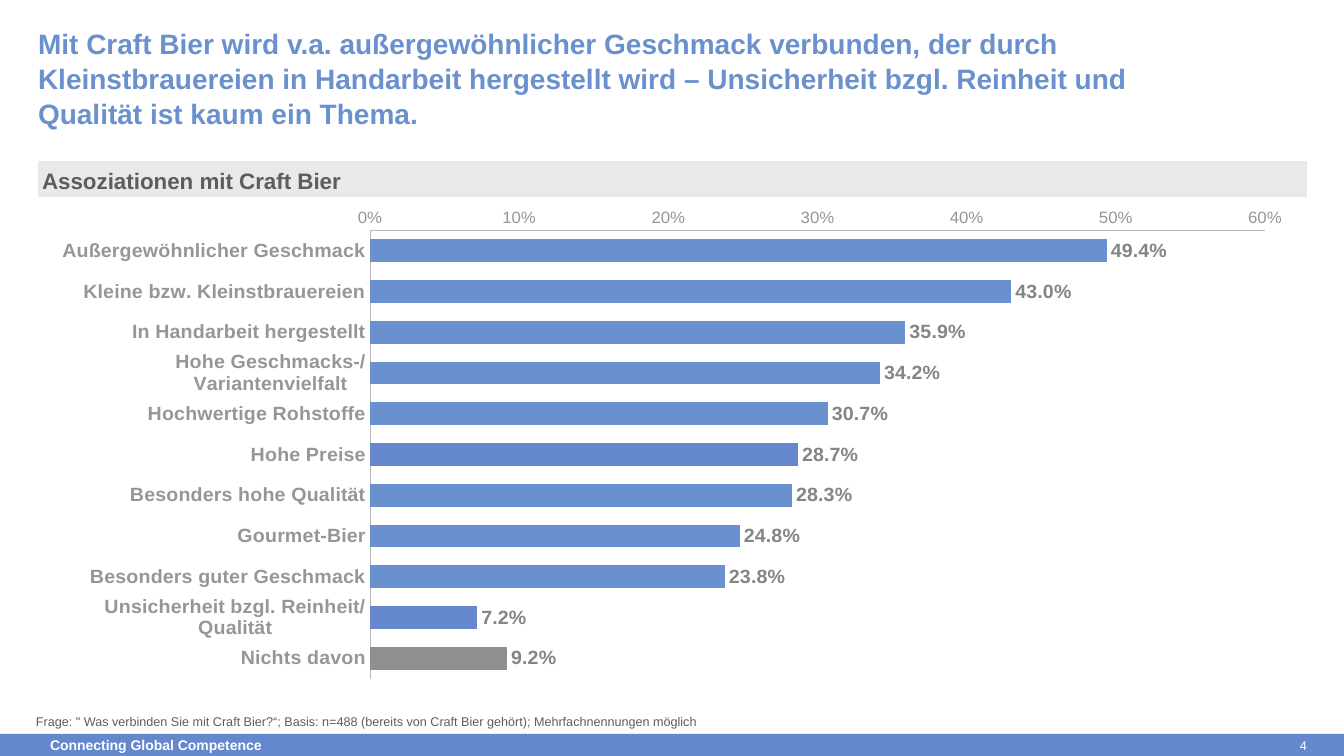
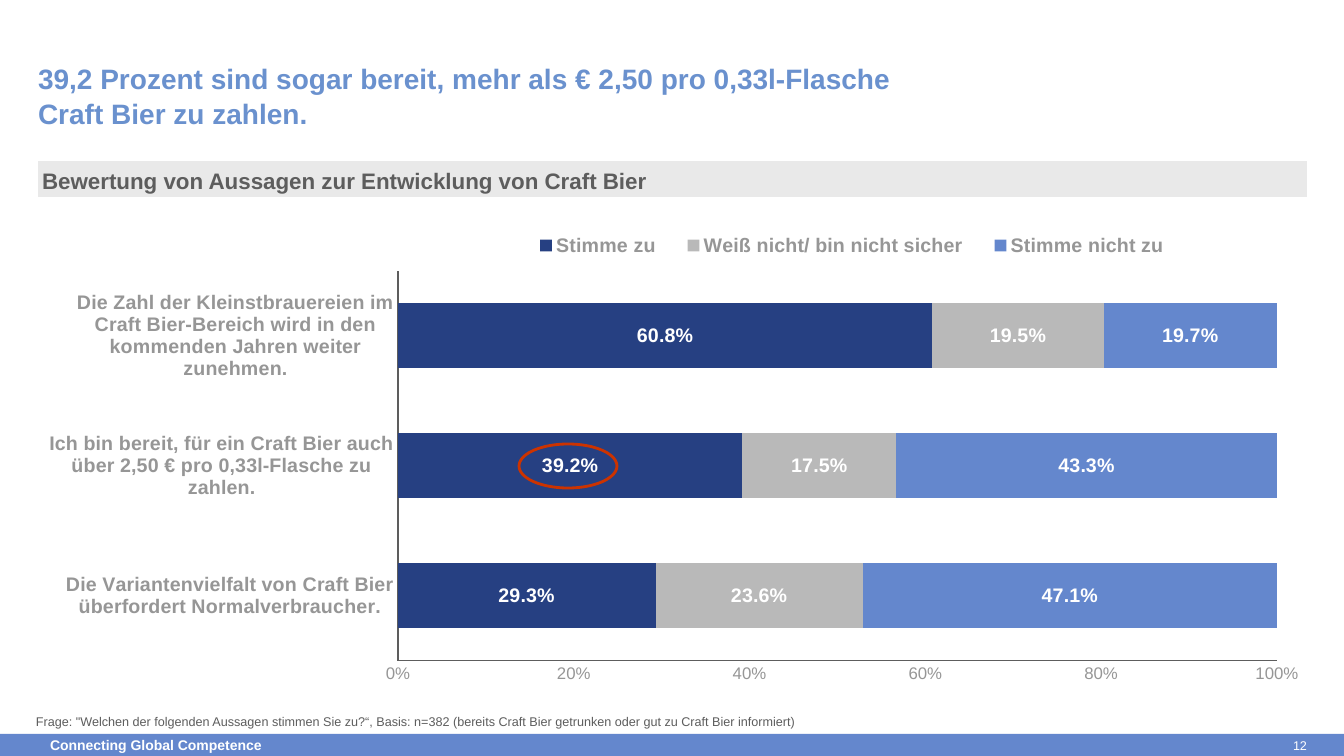
from lxml.etree import SubElement
from pptx import Presentation
from pptx.chart.data import CategoryChartData
from pptx.dml.color import RGBColor
from pptx.enum.chart import (XL_AXIS_CROSSES, XL_CHART_TYPE, XL_LABEL_POSITION,
                             XL_LEGEND_POSITION, XL_TICK_MARK)
from pptx.enum.shapes import MSO_SHAPE
from pptx.enum.text import MSO_ANCHOR, PP_ALIGN
from pptx.oxml.ns import qn
from pptx.util import Emu, Pt

WHITE = RGBColor(0xFF, 0xFF, 0xFF)
TITLE_BLUE = RGBColor(0x6A, 0x91, 0xCE)
BLUE = RGBColor(0x64, 0x87, 0xCD)
NAVY = RGBColor(0x26, 0x40, 0x82)
RED = RGBColor(0xCC, 0x33, 0x00)
TEXT_GREY = RGBColor(0x5D, 0x5D, 0x5D)
BAR_GREY = RGBColor(0x8F, 0x8F, 0x8F)
VALUE_GREY = RGBColor(0x85, 0x85, 0x85)
AXIS_GREY = RGBColor(0x96, 0x96, 0x96)
LIGHT_GREY = RGBColor(0xB9, 0xB9, 0xB9)
BAND_GREY = RGBColor(0xE9, 0xE9, 0xE9)

FONT = "Arial"
EMU_PER_PX = 914400 / 100.8
SLIDE_SIZE = (1344, 756)
TITLE_BOX = (38, 23, 1111, 107)
BAND_BOX = (38, 161, 1269, 36)
NOTE_BOX = (36, 714, 1285, 15)
FOOTER_BOX = (0, 734, 1344, 22)


def px(length):
    return Emu(round(length * EMU_PER_PX))


def place(box):
    return [px(length) for length in box]


def style_font(font, size, color, bold=False):
    font.name, font.size, font.bold = FONT, Pt(size), bold
    font.color.rgb = color


def write(shape, text, size, color, bold=False, anchor=MSO_ANCHOR.MIDDLE,
          align=PP_ALIGN.LEFT, inset=0, spacing=1.0):
    frame = shape.text_frame
    frame.word_wrap = True
    frame.vertical_anchor = anchor
    frame.margin_left = frame.margin_right = px(inset)
    frame.margin_top = frame.margin_bottom = px(inset)
    frame.text = text
    para = frame.paragraphs[0]
    para.alignment = align
    para.line_spacing = spacing
    style_font(para.font, size, color, bold)


def add_text(page, box, *args, **options):
    write(page.shapes.add_textbox(*place(box)), *args, **options)


def add_panel(page, box, color):
    panel = page.shapes.add_shape(MSO_SHAPE.RECTANGLE, *place(box))
    panel.shadow.inherit = False
    panel.fill.solid()
    panel.fill.fore_color.rgb = color
    panel.line.fill.background()
    return panel


def add_footer(page, box, number):
    left, top, width, height = box
    add_panel(page, box, BLUE)
    add_text(page, (left + 50, top, 640, height),
             "Connecting Global Competence", 10, WHITE, True)
    add_text(page, (left + width - 88, top, 51, height), str(number), 9, WHITE,
             align=PP_ALIGN.RIGHT)


def add_page(deck, title, heading, note, number):
    """Add a page with the shared title, heading band, note and footer."""
    page = deck.slides.add_slide(deck.slide_layouts[6])
    add_footer(page, FOOTER_BOX, number)
    add_text(page, TITLE_BOX, title, 20, TITLE_BLUE, True,
             anchor=MSO_ANCHOR.BOTTOM, spacing=1.04)
    write(add_panel(page, BAND_BOX, BAND_GREY), heading, 16, TEXT_GREY, True,
          inset=4, spacing=1.1)
    add_text(page, NOTE_BOX, note, 9, TEXT_GREY, anchor=MSO_ANCHOR.TOP)
    return page


def set_layout(parent, index, chart_box, part_box, inner=False):
    """Fix a chart part at part_box, given in px within the slide."""
    for old in parent.findall(qn("c:layout")):
        parent.remove(old)
    layout = parent.makeelement(qn("c:layout"), {})
    parent.insert(index, layout)
    manual = SubElement(layout, qn("c:manualLayout"))
    left, top, width, height = chart_box
    settings = [("layoutTarget", "inner")] if inner else []
    settings += [("xMode", "edge"), ("yMode", "edge"),
                 ("x", (part_box[0] - left) / width),
                 ("y", (part_box[1] - top) / height),
                 ("w", part_box[2] / width), ("h", part_box[3] / height)]
    for tag, value in settings:
        SubElement(manual, qn("c:" + tag)).set("val", str(value))


def add_bar_chart(page, kind, box, plot_box, categories, series, gap,
                  axis_color, maximum, step, label_color, label_position):
    """Add a percentage bar chart; series holds (name, values, color)."""
    data = CategoryChartData(number_format="0.0%")
    data.categories = categories
    for name, values, _ in series:
        data.add_series(name, values)
    chart = page.shapes.add_chart(kind, *place(box), data).chart
    chart.has_title = False
    chart.has_legend = False
    style_font(chart.font, 10, TEXT_GREY)
    set_layout(chart.element.find(".//" + qn("c:plotArea")), 0, box, plot_box,
               inner=True)

    # Axes
    category_axis, value_axis = chart.category_axis, chart.value_axis
    for axis, size, bold in ((category_axis, 14, True), (value_axis, 12, False)):
        axis.has_major_gridlines = False
        axis.major_tick_mark = axis.minor_tick_mark = XL_TICK_MARK.NONE
        axis.format.line.color.rgb = axis_color
        axis.format.line.width = Pt(0.75)
        style_font(axis.tick_labels.font, size, AXIS_GREY, bold)
    value_axis.minimum_scale, value_axis.maximum_scale = 0, maximum
    value_axis.major_unit = step
    value_axis.tick_labels.number_format = "0%"
    value_axis.tick_labels.number_format_is_linked = False

    # Bars and their values
    plot = chart.plots[0]
    plot.gap_width = gap
    plot.vary_by_categories = False
    for bars, (_, _, color) in zip(plot.series, series):
        bars.invert_if_negative = False
        bars.format.fill.solid()
        bars.format.fill.fore_color.rgb = color
        labels = bars.data_labels
        labels.show_value = True
        labels.number_format = "0.0%"
        labels.number_format_is_linked = False
        labels.position = label_position
        style_font(labels.font, 14, label_color, True)
    return chart


def add_legend(chart, chart_box, box):
    chart.has_legend = True
    legend = chart.legend
    legend.position = XL_LEGEND_POSITION.BOTTOM
    legend.include_in_layout = False
    style_font(legend.font, 14, AXIS_GREY, True)
    set_layout(chart.element.find(".//" + qn("c:legend")), 1, chart_box, box)


def build_associations(deck):
    page = add_page(
        deck,
        "Mit Craft Bier wird v.a. außergewöhnlicher Geschmack verbunden, der "
        "durch Kleinstbrauereien in Handarbeit hergestellt wird – Unsicherheit "
        "bzgl. Reinheit und Qualität ist kaum ein Thema.",
        "Assoziationen mit Craft Bier",
        'Frage: " Was verbinden Sie mit Craft Bier?“; Basis: n=488 (bereits von '
        "Craft Bier gehört); Mehrfachnennungen möglich", 4)
    shares = {
        "Außergewöhnlicher Geschmack": 0.494,
        "Kleine bzw. Kleinstbrauereien": 0.43,
        "In Handarbeit hergestellt": 0.359,
        "Hohe Geschmacks-/ Variantenvielfalt": 0.342,
        "Hochwertige Rohstoffe": 0.307,
        "Hohe Preise": 0.287,
        "Besonders hohe Qualität": 0.283,
        "Gourmet-Bier": 0.248,
        "Besonders guter Geschmack": 0.238,
        "Unsicherheit bzgl. Reinheit/ Qualität": 0.072,
        "Nichts davon": 0.092,
    }
    chart = add_bar_chart(
        page, XL_CHART_TYPE.BAR_CLUSTERED, (38, 209, 1269, 501),
        (370, 219, 895, 459), list(shares),
        [("Series 1", list(shares.values()), TITLE_BLUE)], 80, LIGHT_GREY,
        0.6, 0.1, VALUE_GREY, XL_LABEL_POSITION.OUTSIDE_END)
    chart.category_axis.reverse_order = True
    chart.category_axis.crosses = XL_AXIS_CROSSES.MAXIMUM
    for index, color in ((5, BLUE), (9, BLUE), (10, BAR_GREY)):
        fill = chart.plots[0].series[0].points[index].format.fill
        fill.solid()
        fill.fore_color.rgb = color


def build_statements(deck):
    page = add_page(
        deck,
        "39,2 Prozent sind sogar bereit, mehr als € 2,50 pro 0,33l-Flasche\v"
        "Craft Bier zu zahlen.",
        "Bewertung von Aussagen zur Entwicklung von Craft Bier",
        'Frage: "Welchen der folgenden Aussagen stimmen Sie zu?“, Basis: n=382 '
        "(bereits Craft Bier getrunken oder gut zu Craft Bier informiert)", 12)
    statements = [
        "Die Variantenvielfalt von Craft Bier überfordert Normalverbraucher.",
        "Ich bin bereit, für ein Craft Bier auch über 2,50 € pro 0,33l-Flasche "
        "zu zahlen.",
        "Die Zahl der Kleinstbrauereien im Craft Bier-Bereich wird in den "
        "kommenden Jahren weiter zunehmen.",
    ]
    answers = [
        ("Stimme zu", (0.293, 0.392, 0.608), NAVY),
        ("Weiß nicht/ bin nicht sicher", (0.236, 0.175, 0.195), LIGHT_GREY),
        ("Stimme nicht zu", (0.471, 0.433, 0.197), BLUE),
    ]
    chart_box = (38, 201, 1269, 509)
    chart = add_bar_chart(
        page, XL_CHART_TYPE.BAR_STACKED, chart_box, (398, 271, 879, 390),
        statements, answers, 100, TEXT_GREY, 1, 0.2, WHITE,
        XL_LABEL_POSITION.CENTER)
    chart.plots[0].overlap = 100
    add_legend(chart, chart_box, (515, 230, 674, 31))

    # Ring around the key value
    ring = page.shapes.add_shape(MSO_SHAPE.OVAL, *place((519, 444, 98, 44)))
    ring.shadow.inherit = False
    ring.fill.background()
    ring.line.color.rgb = RED
    ring.line.width = Pt(2)


def main():
    deck = Presentation()
    deck.slide_width, deck.slide_height = place(SLIDE_SIZE)
    build_associations(deck)
    build_statements(deck)
    deck.save("out.pptx")


if __name__ == "__main__":
    main()
